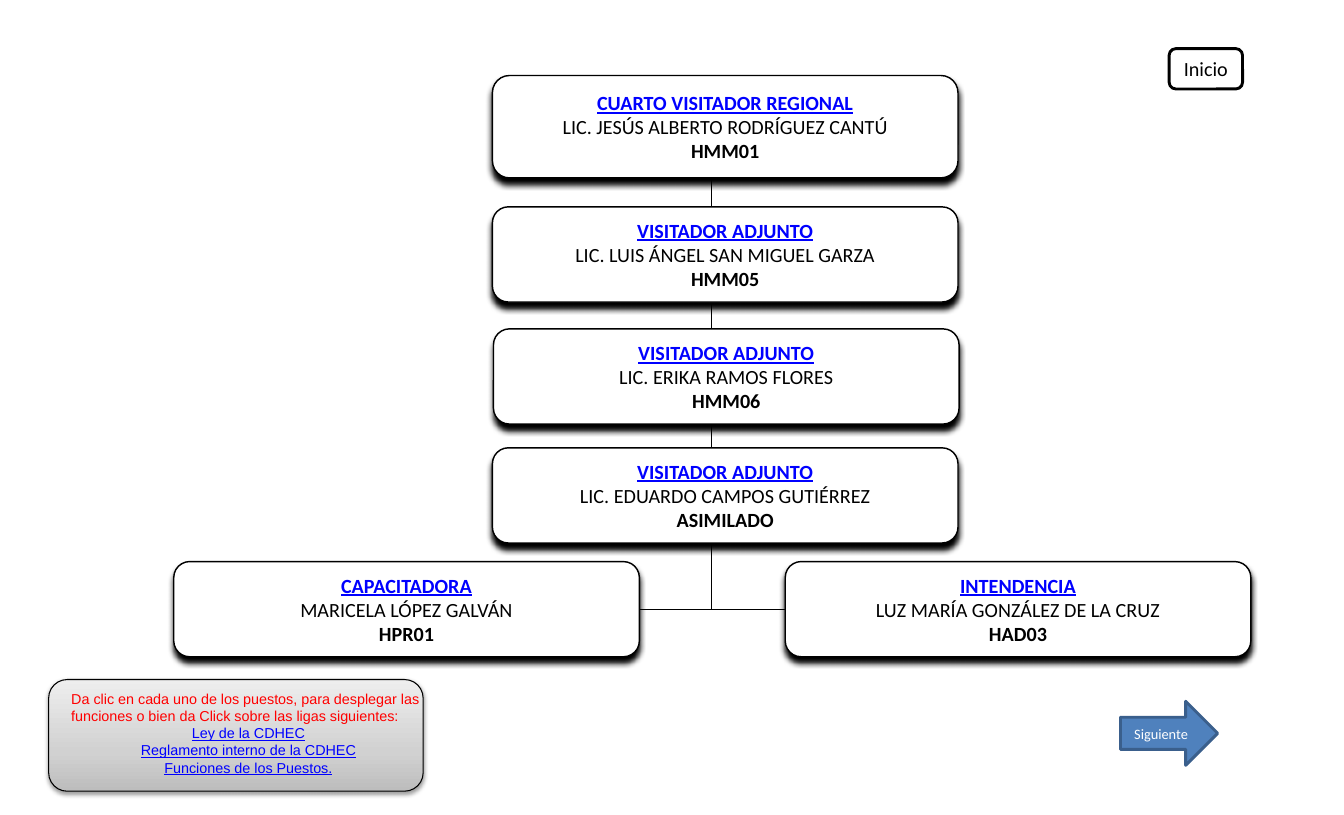
from copy import deepcopy

from lxml import etree
from pptx import Presentation
from pptx.dml.color import RGBColor
from pptx.enum.shapes import MSO_CONNECTOR, MSO_SHAPE
from pptx.enum.text import MSO_ANCHOR, PP_ALIGN
from pptx.oxml.ns import qn
from pptx.util import Inches, Pt

COLORS = {name: RGBColor.from_string(code) for name, code in {
    "black": "000000", "white": "FFFFFF", "link": "0000FF", "notice": "FF0000",
    "arrow": "4F81BD", "arrow_edge": "3A5F8C",
    "gray_dark": "BDBDBD", "gray_mid": "D1D1D1", "gray_light": "EEEEEE",
}.items()}


def add_effects(item, blur=0, distance=0, opacity=0):
    """Give the item a downward shadow, or an empty effect list if opacity is 0."""
    effects = etree.SubElement(item._element.spPr, qn("a:effectLst"))
    if opacity:
        shadow = etree.SubElement(effects, qn("a:outerShdw"), blurRad=str(Pt(blur)),
                                  dist=str(Pt(distance)), dir="5400000", rotWithShape="0")
        color = etree.SubElement(shadow, qn("a:srgbClr"), val=str(COLORS["black"]))
        etree.SubElement(color, qn("a:alpha"), val=str(opacity * 1000))


def write_lines(frame, lines, font_name, size, align=PP_ALIGN.CENTER):
    """Fill the frame with (text, color, bold, underline) lines."""
    for index, (text, color, bold, underline) in enumerate(lines):
        line = frame.paragraphs[0] if index == 0 else frame.add_paragraph()
        line.text = text
        line.alignment = align
        line.font.name = font_name
        line.font.size = Pt(size)
        line.font.color.rgb = COLORS[color]
        line.font.bold = bold
        line.font.underline = underline


prs = Presentation()
prs.slide_width, prs.slide_height = Inches(12.99), Inches(7.88)
slide = prs.slides.add_slide(prs.slide_layouts[6])
shapes = slide.shapes

# Trunk of the chart, behind the posts
trunk = shapes.add_connector(MSO_CONNECTOR.STRAIGHT, Inches(6.88), Inches(1.73),
                             Inches(6.88), Inches(5.89))

# Posts: left, top, height, post, person, code
posts = [
    (4.76, 0.73, 0.99, "CUARTO VISITADOR REGIONAL", "LIC. JESÚS ALBERTO RODRÍGUEZ CANTÚ", "HMM01"),
    (4.76, 2.00, 0.92, "VISITADOR ADJUNTO", "LIC. LUIS ÁNGEL SAN MIGUEL GARZA", "HMM05"),
    (4.77, 3.18, 0.92, "VISITADOR ADJUNTO", "LIC. ERIKA RAMOS FLORES", "HMM06"),
    (4.76, 4.33, 0.92, "VISITADOR ADJUNTO", "LIC. EDUARDO CAMPOS GUTIÉRREZ", "ASIMILADO"),
    (1.68, 5.43, 0.92, "CAPACITADORA", "MARICELA LÓPEZ GALVÁN", "HPR01"),
    (7.59, 5.43, 0.92, "INTENDENCIA", "LUZ MARÍA GONZÁLEZ DE LA CRUZ", "HAD03"),
]
post_boxes = []
for left, top, height, post, person, code in posts:
    box = shapes.add_shape(MSO_SHAPE.ROUNDED_RECTANGLE, Inches(left), Inches(top),
                           Inches(4.5), Inches(height))
    box.fill.solid()
    box.fill.fore_color.rgb = COLORS["white"]
    box.line.color.rgb = COLORS["black"]
    box.line.width = Pt(1)
    add_effects(box, blur=4, distance=4, opacity=100)
    frame = box.text_frame
    frame.word_wrap = False
    frame.vertical_anchor = MSO_ANCHOR.MIDDLE
    frame.margin_left = frame.margin_right = Inches(0.17)
    frame.margin_top = frame.margin_bottom = Inches(0.09)
    write_lines(frame, [(post, "link", True, True), (person, "black", False, False),
                        (code, "black", True, False)], "Calibri", 14)
    post_boxes.append(box)

# Branch between the two bottom posts
branch = shapes.add_connector(MSO_CONNECTOR.STRAIGHT, Inches(6.18), Inches(5.89),
                              Inches(7.59), Inches(5.89))
branch.begin_connect(post_boxes[-2], 3)
branch.end_connect(post_boxes[-1], 1)
for link in (trunk, branch):
    link.line.color.rgb = COLORS["black"]
    link.line.width = Pt(0.75)
    add_effects(link)

# Navigation buttons
buttons = [
    (MSO_SHAPE.ROUNDED_RECTANGLE, 11.3, 0.47, 0.71, 0.39, "white", "black", "Inicio", 14, "black"),
    (MSO_SHAPE.RIGHT_ARROW, 10.83, 6.78, 0.94, 0.62, "arrow", "arrow_edge", "Siguiente", 10, "white"),
]
for kind, left, top, width, height, fill, edge, label, size, text_color in buttons:
    button = shapes.add_shape(kind, Inches(left), Inches(top), Inches(width), Inches(height))
    button.shadow.inherit = False
    button.fill.solid()
    button.fill.fore_color.rgb = COLORS[fill]
    button.line.color.rgb = COLORS[edge]
    button.line.width = Pt(2)
    button.text_frame.vertical_anchor = MSO_ANCHOR.MIDDLE
    write_lines(button.text_frame, [(label, text_color, False, False)], "Calibri", size)

# Instructions panel
panel = shapes.add_shape(MSO_SHAPE.ROUNDED_RECTANGLE, Inches(0.47), Inches(6.57),
                         Inches(3.62), Inches(1.08))
panel.fill.gradient()
panel.fill.gradient_angle = 90
stop_list = panel._element.spPr.find(qn("a:gradFill")).find(qn("a:gsLst"))
stop_list.insert(1, deepcopy(stop_list[0]))
gradient = [(0, "gray_dark"), (0.35, "gray_mid"), (1, "gray_light")]
for stop, (position, color) in zip(panel.fill.gradient_stops, gradient):
    stop.position = position
    stop.color.rgb = COLORS[color]
panel.line.color.rgb = COLORS["black"]
panel.line.width = Pt(0.75)
add_effects(panel, blur=3.1, distance=1.6, opacity=38)

instructions = shapes.add_textbox(Inches(0.59), Inches(6.62), Inches(3.62), Inches(0.94)).text_frame
instructions.word_wrap = True
write_lines(instructions, [
    ("Da clic en cada uno de los puestos, para desplegar las funciones o bien da Click "
     "sobre las ligas siguientes:", "notice", False, False),
    ("Ley de la CDHEC", "link", False, True),
    ("Reglamento interno de la CDHEC", "link", False, True),
    ("Funciones de los Puestos.", "link", False, True),
], "Arial", 10)
instructions.paragraphs[0].alignment = PP_ALIGN.LEFT

prs.save("out.pptx")
